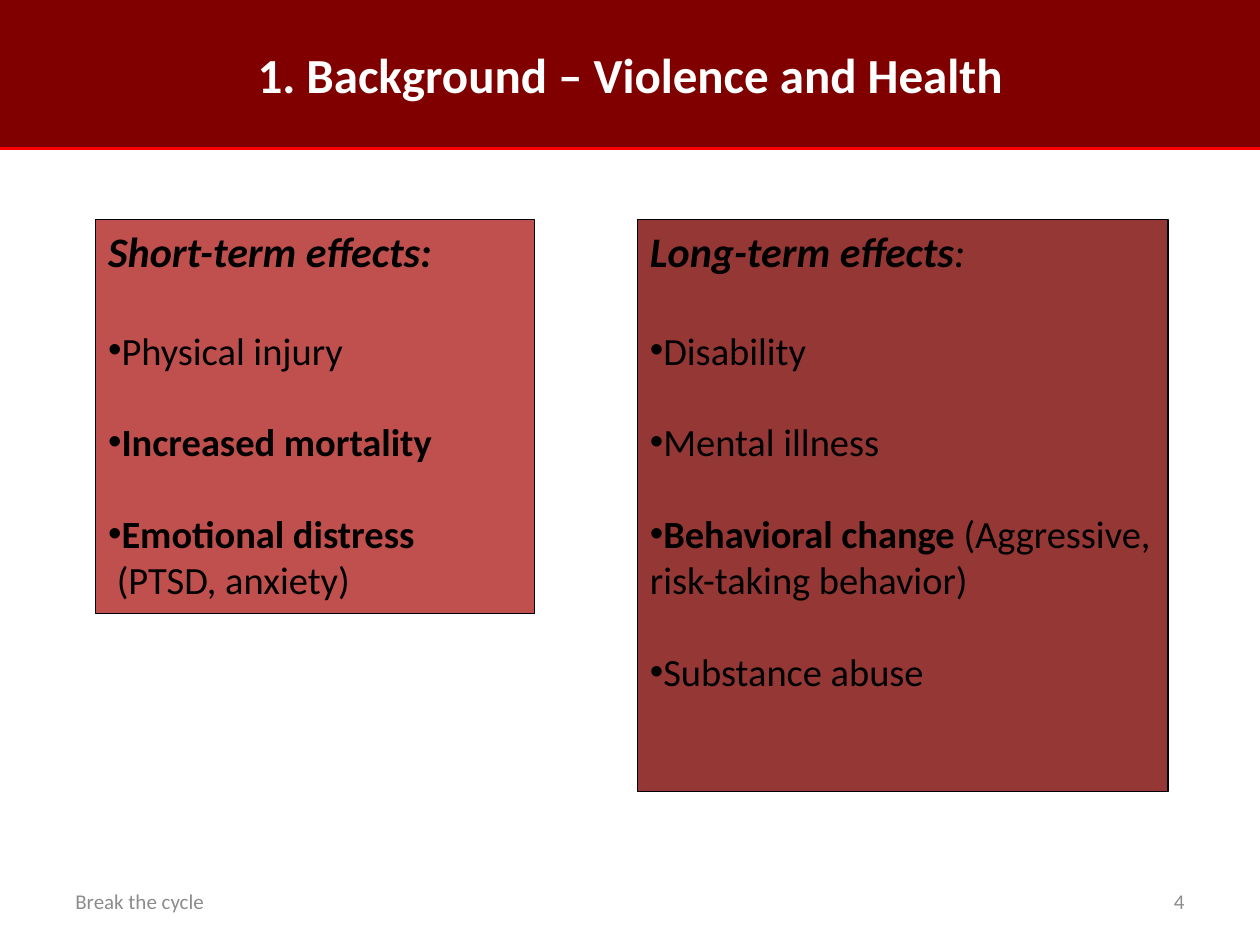
from lxml import etree
from pptx import Presentation
from pptx import util as u
from pptx.dml.color import RGBColor
from pptx.enum import shapes, text
from pptx.oxml.ns import qn

WIDTH, HEIGHT = 10, 7.5
FONT = "Calibri"
COLORS = {
    "banner": "800000", "rule": "FF0000", "short": "C0504D", "long": "953735",
    "ink": "000000", "title": "FFFFFF", "footer": "8C8C8C",
}
HEADING_SIZE, ITEM_SIZE = 24, 22
HEADING_GAP, ITEM_GAP = 29, 26  # points above the first and the later items
BANNER_HEIGHT = 1.18
PANEL_TOP = 1.74
MARGIN, FOOTER_TOP, FOOTER_WIDTH, FOOTER_HEIGHT = 0.5, 6.95, 2.33, 0.4

TITLE = "1. Background – Violence and Health"
# Runs are (text, style): b bold, i italic. Paragraphs are (bulleted, runs).
PANELS = [
    {
        "color": "short", "left": 0.76, "width": 3.48, "height": 3.13,
        "heading": [("Short-term effects:", "bi")],
        "items": [
            (True, [("Physical injury", "")]),
            (True, [("Increased mortality", "b")]),
            (True, [("Emotional distress", "b")]),
            (False, [(" (PTSD, anxiety)", "")]),
        ],
    },
    {
        "color": "long", "left": 5.06, "width": 4.21, "height": 4.54,
        "heading": [("Long-term effects", "bi"), (":", "i")],
        "items": [
            (True, [("Disability", "")]),
            (True, [("Mental illness", "")]),
            (True, [("Behavioral change ", "b"),
                    ("(Aggressive, risk-taking behavior)", "")]),
            (True, [("Substance abuse", "")]),
        ],
    },
]
FOOTERS = [
    ("Break the cycle", MARGIN, text.PP_ALIGN.LEFT),
    ("4", WIDTH - MARGIN - FOOTER_WIDTH, text.PP_ALIGN.RIGHT),
]


def rgb(name):
    return RGBColor.from_string(COLORS[name])


def inches(*lengths):
    return [u.Inches(length) for length in lengths]


def add_runs(paragraph, runs, size, color, align=text.PP_ALIGN.LEFT):
    paragraph.alignment = align
    for words, style in runs:
        run = paragraph.add_run()
        run.text = words
        run.font.name = FONT
        run.font.size = u.Pt(size)
        run.font.bold = "b" in style
        run.font.italic = "i" in style
        run.font.color.rgb = rgb(color)


def add_bullet(paragraph):
    """Put a bullet directly before the text, with no hanging indent."""
    properties = paragraph._p.get_or_add_pPr()
    properties.set("marL", "0")
    properties.set("indent", "0")
    etree.SubElement(properties, qn("a:buFont")).set("typeface", "Arial")
    etree.SubElement(properties, qn("a:buChar")).set("char", "•")


def add_banner(slide):
    banner = slide.shapes.title
    banner.left, banner.top, banner.width, banner.height = inches(
        0, 0, WIDTH, BANNER_HEIGHT)
    banner.fill.solid()
    banner.fill.fore_color.rgb = rgb("banner")
    frame = banner.text_frame
    frame.auto_size = text.MSO_AUTO_SIZE.NONE
    frame.vertical_anchor = text.MSO_ANCHOR.MIDDLE
    add_runs(frame.paragraphs[0], [(TITLE, "b")], 28, "title", text.PP_ALIGN.CENTER)

    rule = slide.shapes.add_connector(
        shapes.MSO_CONNECTOR.STRAIGHT,
        *inches(0, BANNER_HEIGHT, WIDTH, BANNER_HEIGHT))
    rule.line.color.rgb = rgb("rule")
    rule.line.width = u.Pt(2)
    etree.SubElement(rule._element.spPr, qn("a:effectLst"))


def add_panel(slide, panel):
    box = slide.shapes.add_shape(
        shapes.MSO_SHAPE.RECTANGLE,
        *inches(panel["left"], PANEL_TOP, panel["width"], panel["height"]))
    box.shadow.inherit = False
    box.fill.solid()
    box.fill.fore_color.rgb = rgb(panel["color"])
    box.line.color.rgb = rgb("ink")
    box.line.width = u.Pt(0.75)
    frame = box.text_frame
    frame.word_wrap = True
    frame.vertical_anchor = text.MSO_ANCHOR.TOP
    add_runs(frame.paragraphs[0], panel["heading"], HEADING_SIZE, "ink")
    for index, (bulleted, runs) in enumerate(panel["items"]):
        item = frame.add_paragraph()
        add_runs(item, runs, ITEM_SIZE, "ink")
        if bulleted:
            item.space_before = u.Pt(ITEM_GAP if index else HEADING_GAP)
            add_bullet(item)


def add_footer(slide, words, left, align):
    footer = slide.shapes.add_textbox(
        *inches(left, FOOTER_TOP, FOOTER_WIDTH, FOOTER_HEIGHT))
    frame = footer.text_frame
    frame.word_wrap = True
    frame.vertical_anchor = text.MSO_ANCHOR.MIDDLE
    add_runs(frame.paragraphs[0], [(words, "")], 12, "footer", align)


def main():
    deck = Presentation()
    deck.slide_width, deck.slide_height = inches(WIDTH, HEIGHT)
    slide = deck.slides.add_slide(deck.slide_layouts.get_by_name("Title Only"))
    add_banner(slide)
    for panel in PANELS:
        add_panel(slide, panel)
    for footer in FOOTERS:
        add_footer(slide, *footer)
    deck.save("out.pptx")


if __name__ == "__main__":
    main()
